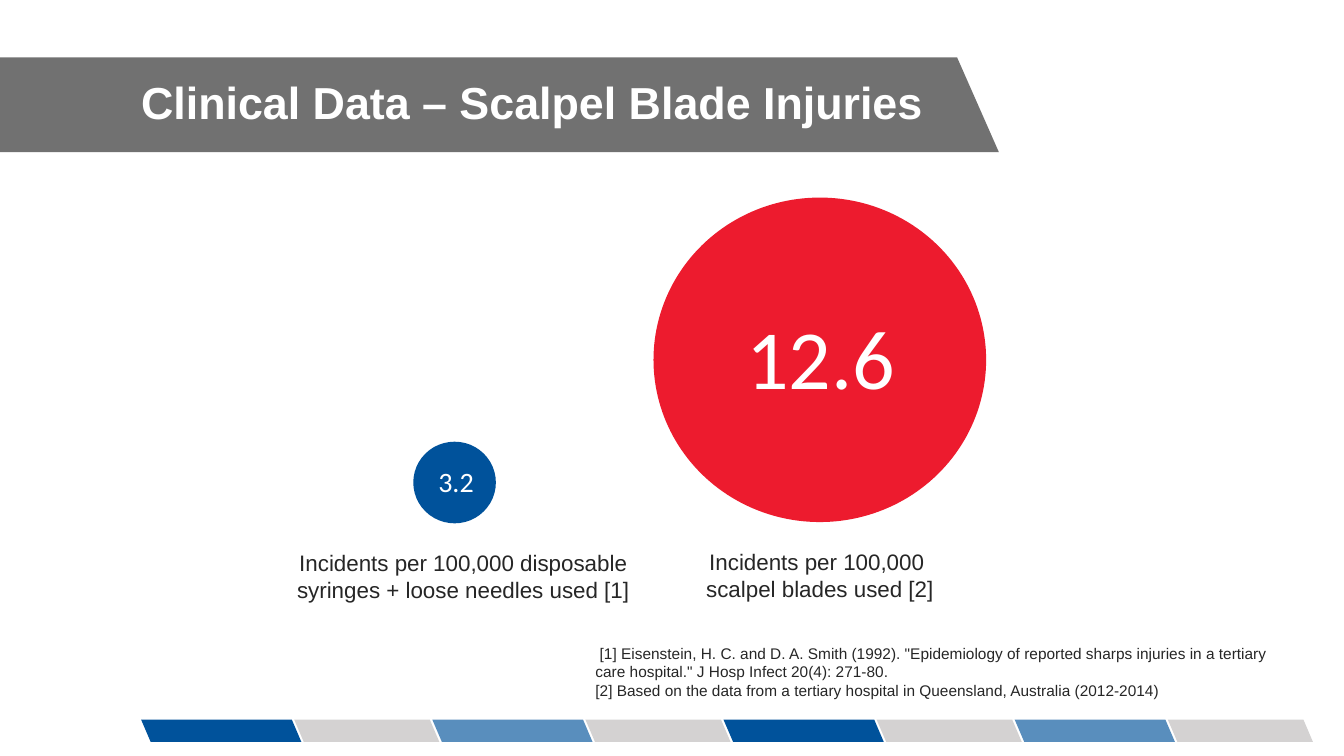
from dataclasses import dataclass

from lxml import etree
from pptx import Presentation
from pptx import util as u
from pptx.dml.color import RGBColor
from pptx.enum import shapes, text
from pptx.oxml import ns

BLUE = RGBColor(0x00, 0x52, 0x9B)
RED = RGBColor(0xED, 0x1B, 0x2E)
GREY = RGBColor(0x75, 0x70, 0x70)
DARK = RGBColor(0x26, 0x26, 0x26)
WHITE = RGBColor(0xFF, 0xFF, 0xFF)

STRIPE_TOP, STRIPE_HEIGHT, STRIPE_SLANT = 514, 16, 0.428
STRIPE_PERIOD = 208


@dataclass(frozen=True)
class Box:
    left: float
    top: float
    width: float
    height: float

    def lengths(self) -> list[u.Length]:
        return [u.Pt(v) for v in (self.left, self.top, self.width, self.height)]


@dataclass(frozen=True)
class Stripe:
    left: float
    width: float
    color: RGBColor
    opacity: int


@dataclass(frozen=True)
class Circle:
    box: Box
    color: RGBColor


@dataclass(frozen=True)
class Label:
    box: Box
    paragraphs: tuple[str, ...]
    size: float
    font: str = "Arial"
    color: RGBColor = DARK
    align: text.PP_ALIGN = text.PP_ALIGN.CENTER
    margins: tuple[float, float, float, float] = (7.2, 3.6, 7.2, 3.6)
    space_before: float = 0


NUMBER = dict(font="Calibri", color=WHITE, margins=(1.44, 1.3, 0, 0), space_before=1.3)

STRIPES = [
    Stripe(100.8, 114.5, BLUE, 100),
    Stripe(210.2, 103.7, GREY, 31),
    Stripe(100.8 + STRIPE_PERIOD, 114.5, BLUE, 65),
    Stripe(210.2 + STRIPE_PERIOD, 103.7, GREY, 31),
]

CIRCLES = [
    Circle(Box(295.2, 315.5, 59, 58.3), BLUE),
    Circle(Box(466.8, 141.1, 237.6, 231.8), RED),
]

LABELS = [
    Label(
        Box(418.5, 456.5, 509.8, 46.8),
        (
            ' [1] Eisenstein, H. C. and D. A. Smith (1992). "Epidemiology of reported '
            'sharps injuries in a tertiary care hospital." J Hosp Infect 20(4): 271-80.',
            "[2] Based on the data from a tertiary hospital in Queensland, "
            "Australia (2012-2014)",
        ),
        11,
        align=text.PP_ALIGN.LEFT,
        margins=(6.8, 3.6, 6.8, 3.6),
    ),
    Label(Box(519.8, 216.7, 131.8, 70.6), ("12.6",), 60, **NUMBER),
    Label(Box(300.2, 330.5, 49.7, 24.5), ("3.2",), 20, **NUMBER),
    Label(
        Box(466.8, 388.1, 237.6, 46.1),
        ("Incidents per 100,000 \vscalpel blades used [2]",),
        16,
    ),
    Label(
        Box(175.7, 388.8, 310.3, 46.1),
        ("Incidents per 100,000 disposable syringes + loose needles used [1]",),
        16,
    ),
]


def add_filled(s, kind: shapes.MSO_SHAPE, box: Box, color: RGBColor, opacity: int = 100):
    sp = s.shapes.add_shape(kind, *box.lengths())
    sp.shadow.inherit = False
    sp.fill.solid()
    sp.fill.fore_color.rgb = color
    sp.line.fill.background()
    if opacity < 100:
        clr = sp.element.spPr.find(ns.qn("a:solidFill")).find(ns.qn("a:srgbClr"))
        etree.SubElement(clr, ns.qn("a:alpha")).set("val", str(opacity * 1000))
    return sp


def add_slanted(s, box: Box, slant: float, color: RGBColor, opacity: int) -> None:
    sp = add_filled(s, shapes.MSO_SHAPE.PARALLELOGRAM, box, color, opacity)
    sp.adjustments[0] = slant
    sp.element.spPr.find(ns.qn("a:xfrm")).set("flipH", "1")


def set_margins(tf, margins: tuple[float, float, float, float]) -> None:
    tf.margin_left, tf.margin_top, tf.margin_right, tf.margin_bottom = map(u.Pt, margins)


def add_label(s, label: Label) -> None:
    tf = s.shapes.add_textbox(*label.box.lengths()).text_frame
    tf.word_wrap = True
    tf.auto_size = text.MSO_AUTO_SIZE.SHAPE_TO_FIT_TEXT
    set_margins(tf, label.margins)
    tf.text = "\n".join(label.paragraphs)
    for p in tf.paragraphs:
        p.alignment = label.align
        p.space_before = u.Pt(label.space_before)
        p.font.name = label.font
        p.font.size = u.Pt(label.size)
        p.font.color.rgb = label.color


def place_title(s, box: Box, wording: str) -> None:
    title = s.shapes.title
    title.left, title.top, title.width, title.height = box.lengths()
    s.shapes.element.append(title.element)
    tf = title.text_frame
    tf.text = wording
    tf.word_wrap = True
    tf.auto_size = text.MSO_AUTO_SIZE.NONE
    tf.vertical_anchor = text.MSO_ANCHOR.MIDDLE
    set_margins(tf, (0, 0, 0, 0))
    p = tf.paragraphs[0]
    p.alignment = text.PP_ALIGN.LEFT
    p.line_spacing = 0.9
    p.font.name = "Arial"
    p.font.size = u.Pt(32)
    p.font.bold = True
    p.font.color.rgb = WHITE


def main() -> None:
    prs = Presentation()
    prs.slide_width, prs.slide_height = u.Pt(960), u.Pt(540)
    s = prs.slides.add_slide(prs.slide_layouts.get_by_name("Title Only"))
    for turn in range(2):
        for stripe in STRIPES:
            left = stripe.left + turn * 2 * STRIPE_PERIOD
            box = Box(left, STRIPE_TOP, stripe.width, STRIPE_HEIGHT)
            add_slanted(s, box, STRIPE_SLANT, stripe.color, stripe.opacity)
    for circle in CIRCLES:
        add_filled(s, shapes.MSO_SHAPE.OVAL, circle.box, circle.color)
    for label in LABELS:
        add_label(s, label)
    add_slanted(s, Box(-64.8, 41, 778.3, 67.7), 0.441, DARK, 65)
    place_title(s, Box(100.8, 49, 563, 51.8), "Clinical Data – Scalpel Blade Injuries")
    prs.save("out.pptx")


if __name__ == "__main__":
    main()
